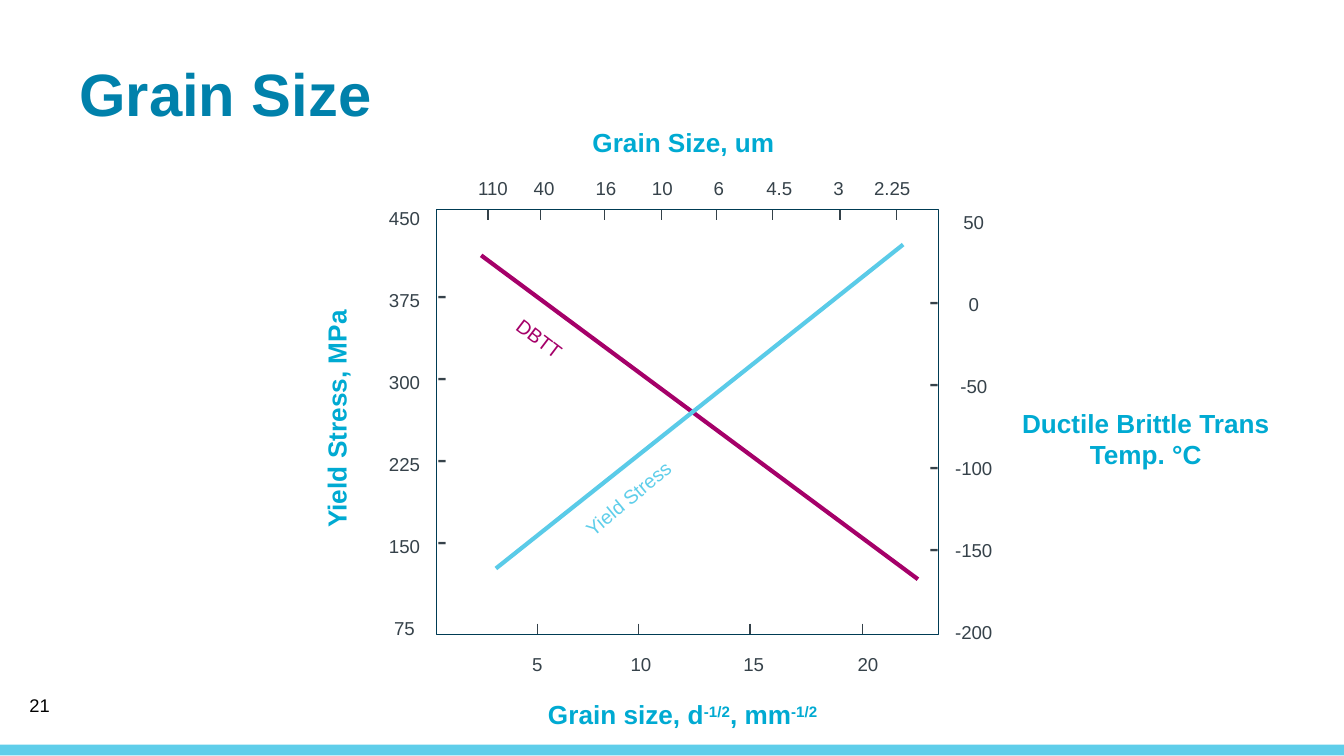
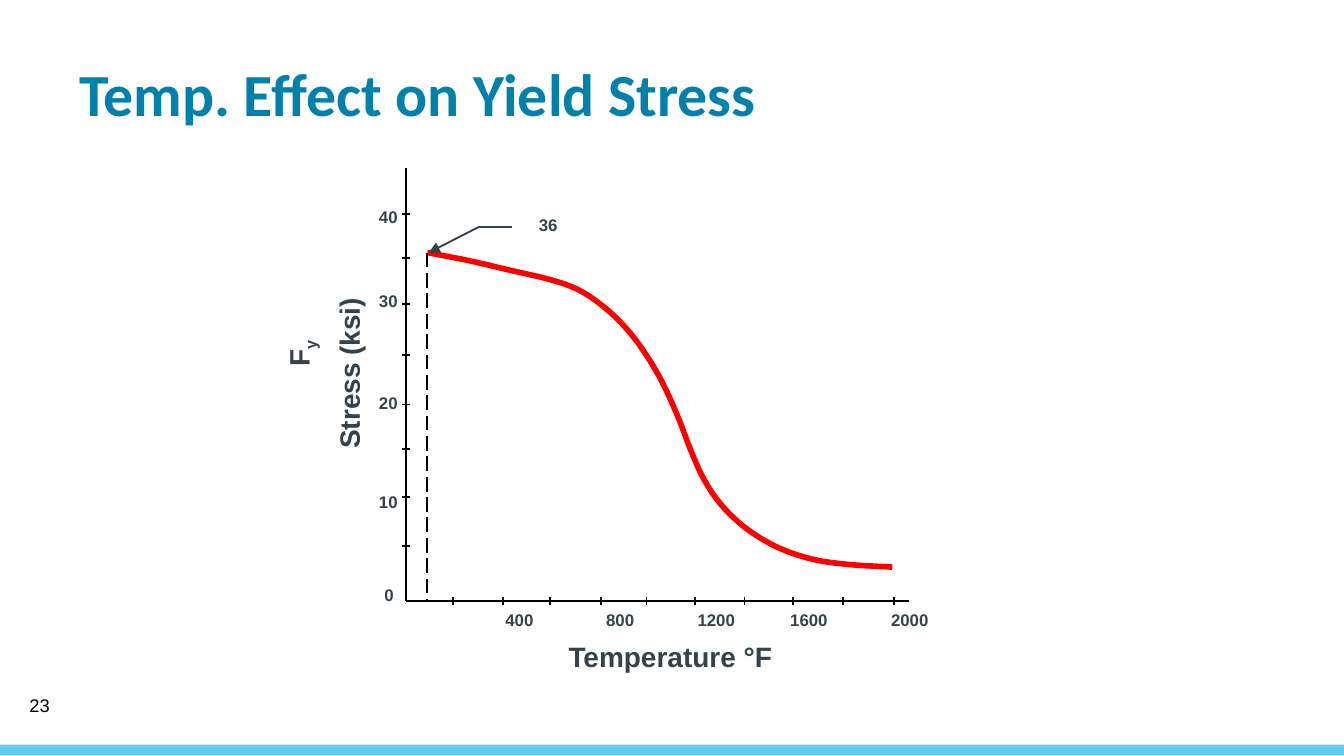
from collections import namedtuple

from lxml import etree
from pptx import Presentation
from pptx import util as u
from pptx.dml.color import RGBColor
from pptx.enum import dml, shapes, text
from pptx.oxml.ns import qn

TITLE_BLUE, LABEL_BLUE, BAND_BLUE = "0081AB", "00AAD2", "5FCEEA"
CURVE_BLUE, PLUM, RED = "5ACBE8", "A50069", "FF0000"
FRAME, TICK, GREY, BLACK = "003B54", "344149", "36424A", "000000"
LEFT, CENTER = text.PP_ALIGN.LEFT, text.PP_ALIGN.CENTER

Box = namedtuple("Box", "left top width height")
Style = namedtuple("Style", "size color bold font", defaults=(False, "Arial"))

AXIS_TITLE = Style(14, LABEL_BLUE, True)
SCALE = Style(10, GREY)
DASH = Style(16, GREY)
TEMP_SCALE = Style(9, GREY, True)
TEMP_TITLE = Style(15, GREY, True)


def color(value):
    return RGBColor.from_string(value)


def inside(region, left, top, width, height):
    """Turn offsets within a region into a box on the page."""
    return Box(region.left + left, region.top + top, width, height)


def style_font(font, style):
    font.size, font.bold, font.name = u.Pt(style.size), style.bold, style.font
    font.color.rgb = color(style.color)


def add_text(page, box, lines, style, align=LEFT, rotation=0,
             insets=(0.1, 0.05, 0.1, 0.05), pitch=None, tabs=()):
    """Each line is a string or a list of (string, baseline percent) spans."""
    shape = page.shapes.add_textbox(*map(u.Inches, box))
    shape.rotation = rotation
    frame = shape.text_frame
    frame.word_wrap = True
    (frame.margin_left, frame.margin_top,
     frame.margin_right, frame.margin_bottom) = map(u.Inches, insets)
    for index, line in enumerate(lines):
        para = frame.add_paragraph() if index else frame.paragraphs[0]
        para.alignment = align
        if pitch:
            para.line_spacing = u.Pt(pitch)
            if index:
                para.space_before = u.Pt(pitch)
        if tabs:
            stops = etree.SubElement(para._p.get_or_add_pPr(), qn("a:tabLst"))
            for stop in tabs:
                etree.SubElement(stops, qn("a:tab"), pos=str(u.Inches(stop)), algn="ctr")
        style_font(para.font, style)
        for words, baseline in [(line, 0)] if isinstance(line, str) else line:
            span = para.add_run()
            span.text = words
            if baseline:
                span.font._element.set("baseline", str(baseline * 1000))
    return frame


def add_line(page, region, start, end, line_color, weight, arrow=False):
    points = [u.Inches(value) for x, y in (start, end)
              for value in (region.left + x, region.top + y)]
    line = page.shapes.add_connector(shapes.MSO_CONNECTOR.STRAIGHT, *points)
    line.line.color.rgb = color(line_color)
    line.line.width = u.Pt(weight)
    if arrow:
        etree.SubElement(line.line._get_or_add_ln(), qn("a:tailEnd"), type="triangle")
    etree.SubElement(line._element.spPr, qn("a:effectLst"))
    return line


def add_page(deck, title, title_font, number):
    page = deck.slides.add_slide(deck.slide_layouts[6])
    # Bottom band
    band = page.shapes.add_shape(shapes.MSO_SHAPE.RECTANGLE,
                                 *map(u.Inches, (0, 5.54, 10, 0.08)))
    band.shadow.inherit = False
    band.fill.solid()
    band.fill.fore_color.rgb = color(BAND_BLUE)
    band.line.fill.background()
    # Title and page number
    add_text(page, Box(0.59, 0.37, 8.99, 0.57), [title],
             Style(32, TITLE_BLUE, True, title_font), insets=(0, 0.05, 0.1, 0.05))
    frame = add_text(page, Box(0.12, 5.1, 2.25, 0.3), [str(number)], Style(9.8, BLACK))
    frame.vertical_anchor = text.MSO_ANCHOR.MIDDLE
    return page


def draw_grain_plot(page, plot):
    # Frame
    frame = page.shapes.add_shape(shapes.MSO_SHAPE.RECTANGLE, *map(u.Inches, plot))
    frame.shadow.inherit = False
    frame.fill.background()
    frame.line.color.rgb = color(FRAME)
    frame.line.width = u.Pt(0.5)

    # Axis titles
    exponent = ("-1/2", 30)
    add_text(page, inside(plot, 0.71, 3.6, 2.24, 0.31),
             [[("Grain size, d", 0), exponent, (", mm", 0), exponent]],
             AXIS_TITLE, CENTER, insets=(0.07, 0.04, 0.07, 0.04))
    titles = [
        ((-1.85, 1.19, 2.21, 0.34), "Yield Stress, MPa", LEFT, 270),
        ((0.73, -0.67, 2.21, 0.34), "Grain Size, um", CENTER, 0),
        ((4.22, 1.42, 2.11, 0.57), "Ductile Brittle Trans Temp. °C", CENTER, 0),
    ]
    for place, words, align, rotation in titles:
        add_text(page, inside(plot, *place), [words], AXIS_TITLE, align, rotation)

    # Vertical scales and their dashes
    columns = [
        ((-0.47, -0.21, 0.46, 3.45), [str(n) for n in range(450, 0, -75)], SCALE),
        ((3.74, -0.18, 0.51, 3.45), [str(n) for n in range(50, -201, -50)], SCALE),
        ((-0.19, 0.4, 0.46, 2.88), ["-"] * 4, DASH),
        ((3.47, 0.45, 0.46, 2.88), ["-"] * 4, DASH),
    ]
    for place, labels, style in columns:
        add_text(page, inside(plot, *place), labels, style, CENTER, pitch=22)

    # Horizontal scales, one centred tab stop per label
    rows = [
        ((0.33, 3.25, 3.33, 0.27), ["5", "10", "15", "20"], (0.32, 1.09, 1.93, 2.78)),
        ((0, -0.29, 3.83, 0.27), ["110", "40", "16", "10", "6", "4.5", "3", "2.25"],
         (0.32, 0.7, 1.16, 1.58, 2, 2.45, 2.89, 3.29)),
    ]
    for place, labels, stops in rows:
        add_text(page, inside(plot, *place), ["\t" + "\t".join(labels)], SCALE, tabs=stops)

    # Ticks
    tick = 0.08
    for top, offsets in ((plot.height - tick, (0.75, 1.5, 2.33, 3.17)),
                         (0, (0.38, 0.77, 1.25, 1.67, 2.08, 2.5, 3, 3.42))):
        for x in offsets:
            add_line(page, plot, (x, top), (x, top + tick), TICK, 0.75)

    # Trend lines with their labels
    add_line(page, plot, (0.33, 0.34), (3.58, 2.75), PLUM, 2.25)
    add_line(page, plot, (0.44, 2.67), (3.47, 0.26), CURVE_BLUE, 2.25)
    add_text(page, inside(plot, 0.33, 0.82, 0.86, 0.29), ["DBTT"],
             Style(10.5, PLUM), CENTER, 37.3)
    add_text(page, inside(plot, 0.89, 2.01, 1.07, 0.28), ["Yield Stress"],
             Style(10.5, BAND_BLUE), CENTER, 320.3)


def smooth_path(points, steps=6):
    """Catmull-Rom interpolation through the given points."""
    padded = [points[0], *points, points[-1]]
    path = [points[0]]
    for a, b, c, d in zip(padded, padded[1:], padded[2:], padded[3:]):
        for step in range(1, steps + 1):
            t = step / steps
            path.append(tuple(
                0.5 * (2 * q + (r - p) * t + (2 * p - 5 * q + 4 * r - s) * t ** 2
                       + (3 * q - p - 3 * r + s) * t ** 3)
                for p, q, r, s in zip(a, b, c, d)))
    return path


def draw_temperature_plot(page, plot):
    # Axes and ticks
    bottom, tick = plot.height, 0.03
    add_line(page, plot, (0, 0), (0, bottom), BLACK, 1)
    add_line(page, plot, (0, bottom), (plot.width, bottom), BLACK, 1)
    for y in (0.34, 0.67, 1.01, 1.39, 1.76, 2.09, 2.45, 2.81):
        add_line(page, plot, (tick, y), (-tick, y), BLACK, 1)
    for x in (0.35, 0.72, 1.07, 1.45, 1.79, 2.15, 2.52, 2.88, 3.25, 3.63):
        add_line(page, plot, (x, bottom - tick), (x, bottom + tick), BLACK, 1)

    # Yield stress curve
    knots = [(0.16, 0.63), (0.47, 0.69), (0.77, 0.76), (1.07, 0.83), (1.27, 0.9),
             (1.43, 1), (1.59, 1.14), (1.74, 1.32), (1.89, 1.56), (2.02, 1.84),
             (2.12, 2.1), (2.22, 2.32), (2.35, 2.51), (2.53, 2.68), (2.76, 2.82),
             (3.02, 2.91), (3.29, 2.95), (3.62, 2.97)]
    path = [(u.Inches(plot.left + x), u.Inches(plot.top + y)) for x, y in smooth_path(knots)]
    builder = page.shapes.build_freeform(*path[0])
    builder.add_line_segments(path[1:], close=False)
    curve = builder.convert_to_shape()
    curve.shadow.inherit = False
    curve.fill.background()
    curve.line.color.rgb = color(RED)
    curve.line.width = u.Pt(3)

    # Dashed drop line and leader to the first value
    drop = add_line(page, plot, knots[0], (0.16, bottom), BLACK, 1)
    drop.line.dash_style = dml.MSO_LINE.LONG_DASH
    add_line(page, plot, (0.54, 0.44), (0.17, 0.63), GREY, 1, arrow=True)
    add_line(page, plot, (0.54, 0.44), (0.79, 0.44), GREY, 1)

    # Scale labels
    labels = [("400", 0.17, 3.25), ("800", 0.92, 3.25), ("1200", 1.6, 3.25),
              ("1600", 2.29, 3.25), ("2000", 3.04, 3.25),
              ("0", -0.73, 3.06), ("10", -0.77, 2.37), ("20", -0.77, 1.63),
              ("30", -0.77, 0.87), ("40", -0.77, 0.25), ("36", 0.42, 0.31)]
    indented = (0.57, 0.04, 0, 0.04)
    for words, x, y in labels:
        add_text(page, inside(plot, x, y, 0.94, 0.23), [words], TEMP_SCALE, insets=indented)

    # Axis titles
    for place, words, rotation in (
            ((0.64, 3.47, 2.31, 0.33), "Temperature °F", 0),
            ((-1.32, 1.6, 1.79, 0.33), "Stress (ksi)", 270),
            ((-1.23, 1.45, 0.86, 0.33), [("F", 0), ("y", -25)], 270)):
        add_text(page, inside(plot, *place), [words], TEMP_TITLE,
                 rotation=rotation, insets=indented)


def main():
    deck = Presentation()
    deck.slide_width = u.Inches(10)
    deck.slide_height = deck.slide_width * 9 // 16
    draw_grain_plot(add_page(deck, "Grain Size", "Arial", 21),
                    Box(3.25, 1.56, 3.73, 3.16))
    draw_temperature_plot(add_page(deck, "Temp. Effect on Yield Stress", "Calibri", 23),
                          Box(3.02, 1.25, 3.74, 3.22))
    deck.save("out.pptx")


if __name__ == "__main__":
    main()
